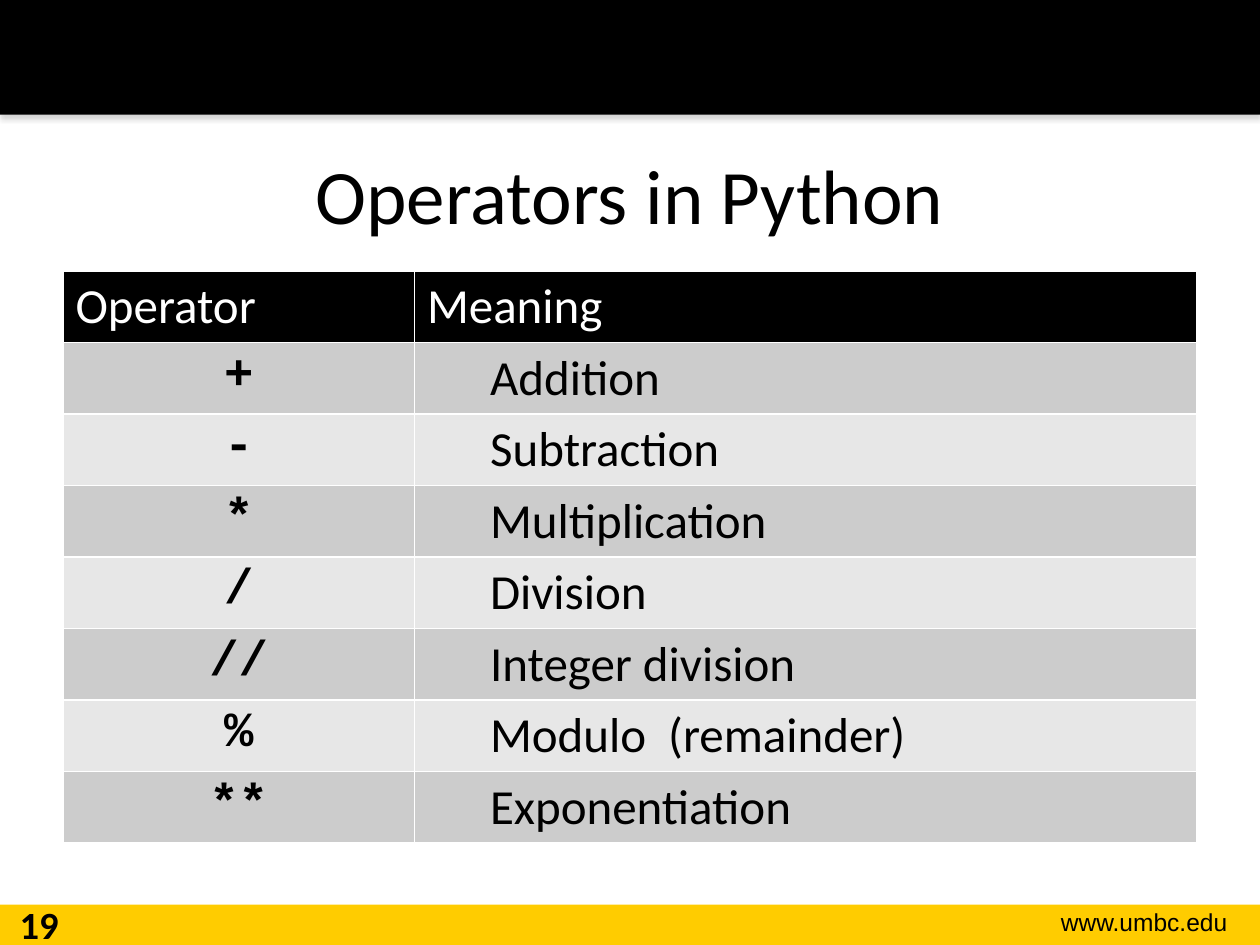
import pptx
import pptx.dml.color
import pptx.enum.shapes
import pptx.enum.text
import pptx.oxml
import pptx.oxml.ns
import pptx.util

WIDTH, HEIGHT = 10, 7.5
ALIGN = pptx.enum.text.PP_ALIGN
ANCHOR = pptx.enum.text.MSO_ANCHOR
NAMESPACE = pptx.oxml.ns.nsdecls("a")
BODY = {"name": "Calibri", "size": 28, "color": "000000", "bold": False}
HEADER = {**BODY, "color": "FFFFFF"}
CODE = {**BODY, "name": "Courier New", "bold": True}
OPERATORS = [
    ("+", "Addition"),
    ("-", "Subtraction"),
    ("*", "Multiplication"),
    ("/", "Division"),
    ("//", "Integer division"),
    ("%", "Modulo  (remainder)"),
    ("**", "Exponentiation"),
]


def color(value):
    return pptx.dml.color.RGBColor.from_string(value)


def inches(*lengths):
    return [pptx.util.Inches(length) for length in lengths]


def write(frame, text, style, align=ALIGN.LEFT, tab=None):
    para = frame.paragraphs[0]
    para.alignment = align
    if tab:
        para._p.get_or_add_pPr().append(pptx.oxml.parse_xml(
            f'<a:tabLst {NAMESPACE}><a:tab pos="{pptx.util.Inches(tab)}" algn="l"/></a:tabLst>'))
    span = para.add_run()
    span.text = text
    values = {**style, "size": pptx.util.Pt(style["size"])}
    span.font.color.rgb = color(values.pop("color"))
    for name, value in values.items():
        setattr(span.font, name, value)


def add_band(page, top, height, fill):
    band = page.shapes.add_shape(
        pptx.enum.shapes.MSO_SHAPE.RECTANGLE, *inches(0, top, WIDTH, height))
    band.shadow.inherit = False
    band.fill.solid()
    band.fill.fore_color.rgb = color(fill)
    band.line.fill.background()
    return band


def add_shadow(band):
    effects = band._element.spPr.find(pptx.oxml.ns.qn("a:effectLst"))
    effects.append(pptx.oxml.parse_xml(
        f'<a:outerShdw {NAMESPACE} blurRad="{pptx.util.Pt(3.1)}" dist="{pptx.util.Pt(1.8)}" '
        'dir="5400000" rotWithShape="0"><a:srgbClr val="808080">'
        '<a:alpha val="35000"/></a:srgbClr></a:outerShdw>'))


def add_label(page, place, text, style, align):
    box = page.shapes.add_textbox(*inches(*place))
    box.text_frame.word_wrap = True
    write(box.text_frame, text, style, align)


def set_title(page, text):
    title = page.shapes.title
    title.left, title.top, title.width, title.height = inches(0.5, 0.91, WIDTH - 1, 1.25)
    title.text_frame.vertical_anchor = ANCHOR.MIDDLE
    write(title.text_frame, text, {**BODY, "size": 44}, ALIGN.CENTER)


def format_cell(cell, fill):
    properties = cell._tc.get_or_add_tcPr()
    for side in "LRTB":
        properties.append(pptx.oxml.parse_xml(
            f'<a:ln{side} {NAMESPACE} w="{pptx.util.Pt(1)}"><a:solidFill>'
            f'<a:srgbClr val="FFFFFF"/></a:solidFill></a:ln{side}>'))
    cell.fill.solid()
    cell.fill.fore_color.rgb = color(fill)


def add_operator_table(page):
    rows = [("Operator", "Meaning"), *OPERATORS]
    table = page.shapes.add_table(
        len(rows), 2, *inches(0.5, 2.15, WIDTH - 1, 4.53)).table
    for column, width in zip(table.columns, inches(2.79, 6.21)):
        column.width = width
    for row, (operator, meaning) in enumerate(rows):
        symbol_cell, meaning_cell = table.cell(row, 0), table.cell(row, 1)
        fill = "000000" if row == 0 else ("E7E7E7", "CCCCCC")[row % 2]
        for cell in (symbol_cell, meaning_cell):
            format_cell(cell, fill)
        if row == 0:
            write(symbol_cell.text_frame, operator, HEADER)
            write(meaning_cell.text_frame, meaning, HEADER)
        else:
            write(symbol_cell.text_frame, operator, CODE, ALIGN.CENTER)
            write(meaning_cell.text_frame, "\t" + meaning, BODY, tab=0.5)


def main():
    deck = pptx.Presentation()
    deck.slide_width, deck.slide_height = inches(WIDTH, HEIGHT)
    page = deck.slides.add_slide(deck.slide_layouts[5])
    add_band(page, HEIGHT - 0.32, 0.32, "FFCC00")
    add_shadow(add_band(page, 0, 0.91, "000000"))
    add_label(page, (7.85, 7.15, 1.99, 0.34), "www.umbc.edu",
              {**BODY, "name": "Arial", "size": 14}, ALIGN.RIGHT)
    set_title(page, "Operators in Python")
    add_operator_table(page)
    add_label(page, (0, 7.1, 0.62, 0.4), "19",
              {**BODY, "size": 22, "bold": True}, ALIGN.CENTER)
    deck.save("out.pptx")


if __name__ == "__main__":
    main()
